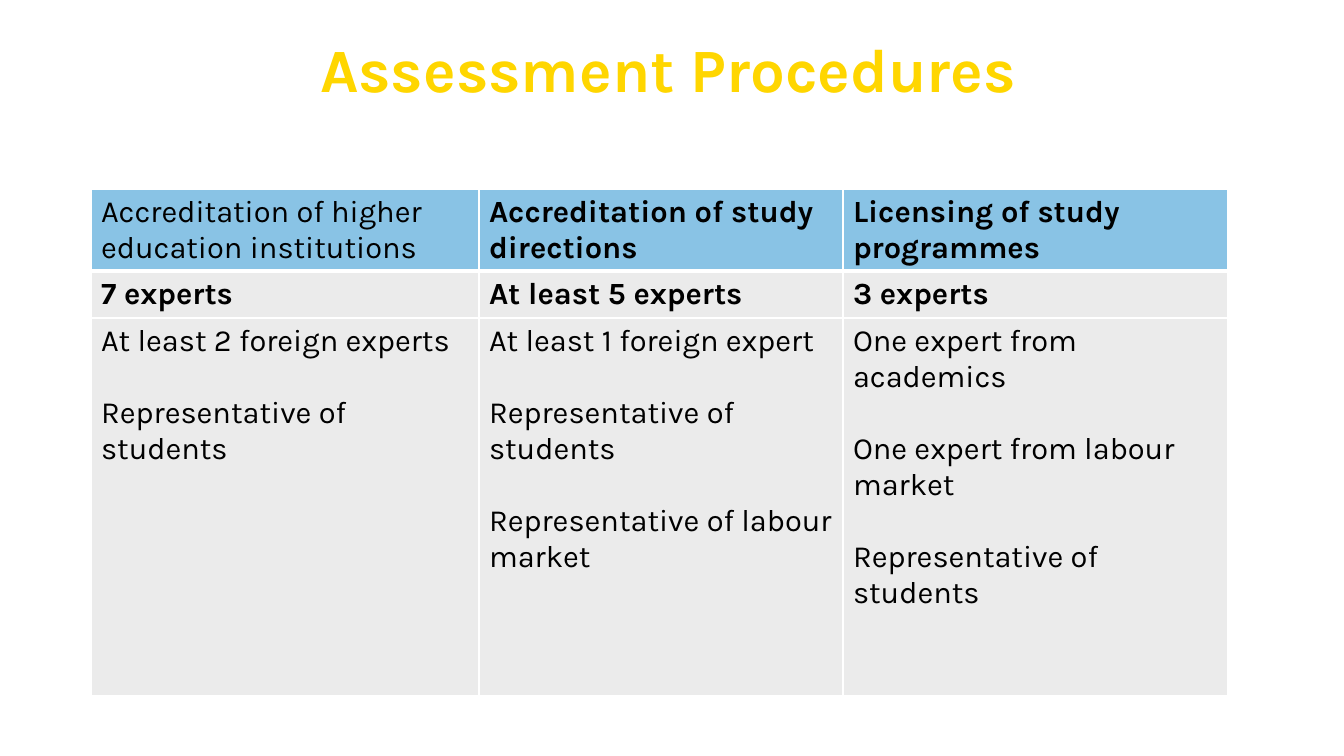
import dataclasses

import lxml.etree
import pptx
import pptx.dml.color
import pptx.enum.text
import pptx.oxml.ns
import pptx.util


@dataclasses.dataclass(frozen=True)
class Theme:
    """Colours, font and type sizes of the slide."""
    font: str = "Karla"
    title_color: str = "FFD600"
    text_color: str = "000000"
    header_fill: str = "89C3E5"
    body_fill: str = "EBEBEB"
    border: str = "FFFFFF"
    title_size: int = 44
    table_size: int = 22
    thin_line: int = 1
    thick_line: int = 3


class SlideBuilder:
    """Places styled elements on one slide, with lengths in px."""

    def __init__(self, deck, theme):
        """Start a title-only slide."""
        self.theme = theme
        self.page = deck.slides.add_slide(deck.slide_layouts[5])

    @staticmethod
    def px(length):
        """Turn px into EMU."""
        return pptx.util.Emu(round(length * 914400 / 100.8))

    @staticmethod
    def apply(target, values):
        """Set every named attribute on the target."""
        for name, value in values.items():
            setattr(target, name, value)

    def add_span(self, para, text, size, color, bold):
        """Add one styled span to a paragraph."""
        span = para.add_run()
        span.text = text
        self.apply(span.font, {"name": self.theme.font, "size": pptx.util.Pt(size), "bold": bold})
        span.font.color.rgb = pptx.dml.color.RGBColor.from_string(color)

    def title(self, text, left, top, width, height):
        """Place and fill the title placeholder."""
        box = self.page.shapes.title
        bounds = {"left": left, "top": top, "width": width, "height": height}
        self.apply(box, {name: self.px(value) for name, value in bounds.items()})
        self.apply(box.text_frame, {
            "word_wrap": True, "vertical_anchor": pptx.enum.text.MSO_ANCHOR.MIDDLE})
        para = box.text_frame.paragraphs[0]
        self.apply(para, {"alignment": pptx.enum.text.PP_ALIGN.CENTER, "line_spacing": 0.9})
        self.add_span(para, text, self.theme.title_size, self.theme.title_color, True)

    def borders(self, cell, top, bottom):
        """Draw the four cell borders."""
        thin = self.theme.thin_line
        properties = cell._tc.get_or_add_tcPr()
        widths = {"a:lnL": thin, "a:lnR": thin, "a:lnT": top, "a:lnB": bottom}
        for index, (tag, width) in enumerate(widths.items()):
            line = lxml.etree.Element(pptx.oxml.ns.qn(tag), w=str(int(pptx.util.Pt(width))))
            fill = lxml.etree.SubElement(line, pptx.oxml.ns.qn("a:solidFill"))
            lxml.etree.SubElement(fill, pptx.oxml.ns.qn("a:srgbClr"), val=self.theme.border)
            properties.insert(index, line)

    def cell(self, cell, texts, fill, bold):
        """Fill a cell with spaced paragraphs."""
        cell.fill.solid()
        cell.fill.fore_color.rgb = pptx.dml.color.RGBColor.from_string(fill)
        for index, text in enumerate(texts):
            if index == 0:
                para = cell.text_frame.paragraphs[0]
            else:
                para = cell.text_frame.add_paragraph()
                para.space_before = self.px(36)
            self.add_span(para, text, self.theme.table_size, self.theme.text_color, bold)

    def table(self, rows, bold_cells, left, top, widths, heights):
        """Add the table with a header row."""
        theme = self.theme
        bounds = [self.px(value) for value in (left, top, sum(widths), sum(heights))]
        grid = self.page.shapes.add_table(len(heights), len(widths), *bounds).table
        for column, width in zip(grid.columns, widths):
            column.width = self.px(width)
        for row, height in zip(grid.rows, heights):
            row.height = self.px(height)
        for r, row in enumerate(rows):
            fill = theme.body_fill if r else theme.header_fill
            top_line = theme.thick_line if r == 1 else theme.thin_line
            bottom_line = theme.thin_line if r else theme.thick_line
            for c, texts in enumerate(row):
                cell = grid.cell(r, c)
                self.cell(cell, texts, fill, bold_cells[r][c])
                self.borders(cell, top_line, bottom_line)


PROCEDURES = [
    [["Accreditation of higher education institutions"],
     ["Accreditation of study directions"],
     ["Licensing of study programmes"]],
    [["7 experts"], ["At least 5 experts"], ["3 experts"]],
    [["At least 2 foreign experts", "Representative of students"],
     ["At least 1 foreign expert", "Representative of students",
      "Representative of labour market"],
     ["One expert from academics", "One expert from labour market",
      "Representative of students"]],
]
BOLD_CELLS = [[False, True, True], [True] * 3, [False] * 3]


def main():
    """Build and save the deck."""
    deck = pptx.Presentation()
    deck.slide_width = SlideBuilder.px(1344)
    deck.slide_height = SlideBuilder.px(756)
    builder = SlideBuilder(deck, Theme())
    builder.title("Assessment Procedures", 44, 0, 1249, 146)
    builder.table(PROCEDURES, BOLD_CELLS, 91, 189, [388, 364, 385], [80, 47, 378])
    deck.save("out.pptx")


if __name__ == "__main__":
    main()
